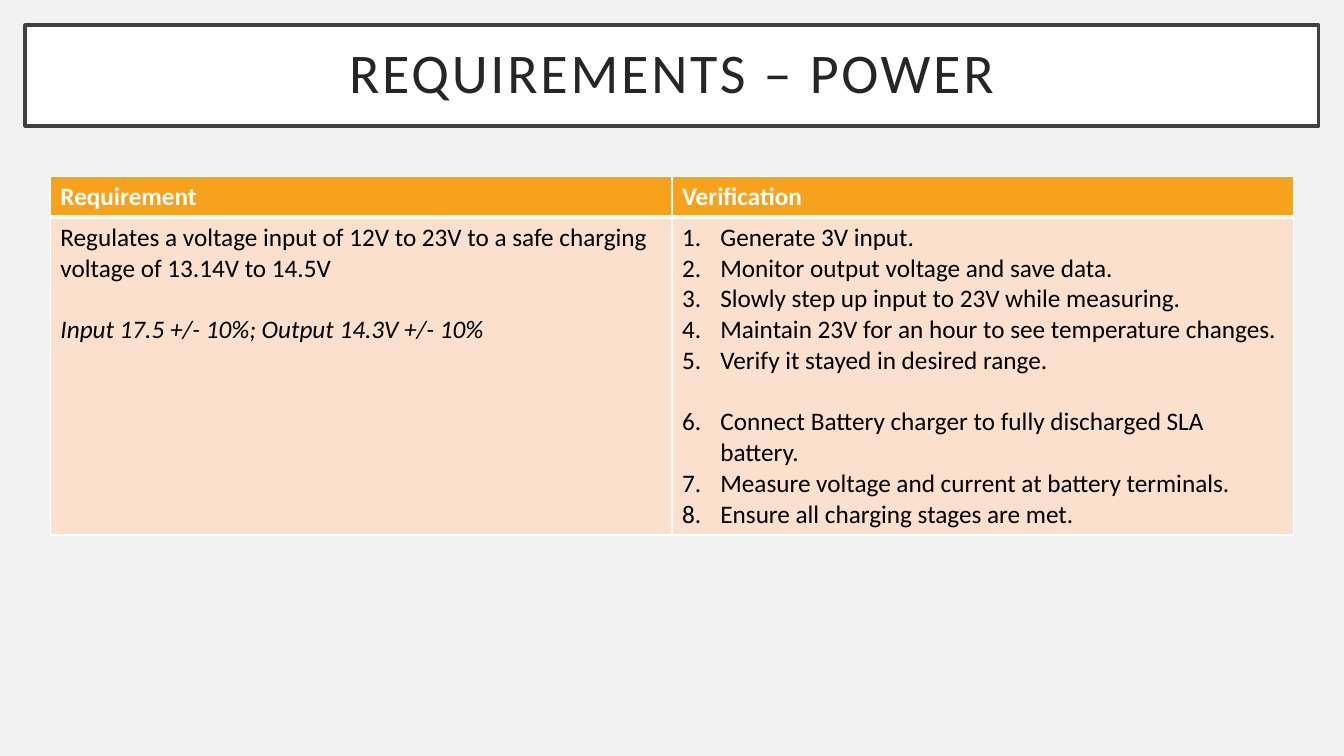
from lxml import etree
from pptx import Presentation
from pptx.dml.color import RGBColor
from pptx.enum.shapes import MSO_SHAPE
from pptx.enum.text import MSO_ANCHOR, PP_ALIGN
from pptx.oxml.ns import qn
from pptx.util import Inches, Pt

RECT = MSO_SHAPE.RECTANGLE
MIDDLE = MSO_ANCHOR.MIDDLE
CENTER = PP_ALIGN.CENTER

FONT = "Calibri"
WHITE, BLACK = "FFFFFF", "000000"
ORANGE, PEACH = "F6A21D", "FBE0CD"
BLANK_LINE = 22  # points, one line of 18 pt text

HEADERS = ["Requirement", "Verification"]
# Each paragraph: text and its format
REQUIREMENT = [
    ("Regulates a voltage input of 12V to 23V to a safe charging voltage of 13.14V to 14.5V", {}),
    ("Input 17.5 +/- 10%; Output 14.3V +/- 10%", {"italic": True, "before": BLANK_LINE}),
]
VERIFICATION = [
    ("Generate 3V input.", {}),
    ("Monitor output voltage and save data.", {}),
    ("Slowly step up input to 23V while measuring.", {}),
    ("Maintain 23V for an hour to see temperature changes.", {}),
    ("Verify it stayed in desired range.", {}),
    ("Connect Battery charger to fully discharged SLA battery.", {"before": BLANK_LINE}),
    ("Measure voltage and current at battery terminals.", {}),
    ("Ensure all charging stages are met.", {}),
]


def rgb(color):
    return RGBColor.from_string(color)


def add_text(tf, text, size=18, color=BLACK, bold=False, italic=False, align=None,
             before=0, line_spacing=None, tracking=0, numbered=False):
    """Write one paragraph, using the empty first one if it is still free."""
    p = tf.paragraphs[0]
    if p.runs:
        p = tf.add_paragraph()
    p.alignment = align
    p.space_before = Pt(before)
    p.line_spacing = line_spacing
    r = p.add_run()
    r.text = text
    font = r.font
    font.name, font.size, font.bold, font.italic = FONT, Pt(size), bold, italic
    font.color.rgb = rgb(color)
    if tracking:
        font._element.set("spc", str(tracking * 100))
    if numbered:
        pPr = p._p.get_or_add_pPr()
        pPr.set("marL", str(Inches(0.38)))
        pPr.set("indent", str(-Inches(0.38)))
        etree.SubElement(pPr, qn("a:buFont"), typeface="+mj-lt")
        etree.SubElement(pPr, qn("a:buAutoNum"), type="arabicPeriod")


def style_cell(cell, fill, top=1, bottom=1):
    """Give a cell white borders (widths in points) and a plain fill."""
    tcPr = cell._tc.get_or_add_tcPr()
    for side, width in (("L", 1), ("R", 1), ("T", top), ("B", bottom)):
        ln = etree.SubElement(tcPr, qn(f"a:ln{side}"), w=str(Pt(width)))
        solid = etree.SubElement(ln, qn("a:solidFill"))
        etree.SubElement(solid, qn("a:srgbClr"), val=WHITE)
    cell.fill.solid()
    cell.fill.fore_color.rgb = rgb(fill)


def add_title(s, text, left, top, width, height):
    sp = s.shapes.add_shape(RECT, Inches(left), Inches(top), Inches(width), Inches(height))
    sp.shadow.inherit = False
    sp.fill.solid()
    sp.fill.fore_color.rgb = rgb(WHITE)
    sp.line.color.rgb = rgb("404040")
    sp.line.width = Pt(2.5)
    tf = sp.text_frame
    tf.word_wrap = True
    tf.vertical_anchor = MIDDLE
    tf.margin_left = tf.margin_right = tf.margin_top = tf.margin_bottom = Inches(0.2)
    add_text(tf, text, size=40, color="262626", align=CENTER, line_spacing=0.9, tracking=2)


def add_requirements_table(s, left, top, width, height, header_height=0.4):
    frame = s.shapes.add_table(2, 2, Inches(left), Inches(top), Inches(width), Inches(height))
    table = frame.table
    table.rows[0].height = Inches(header_height)
    table.rows[1].height = Inches(height - header_height)
    # Header row
    for col, header in enumerate(HEADERS):
        cell = table.cell(0, col)
        style_cell(cell, ORANGE, bottom=3)
        add_text(cell.text_frame, header, color=WHITE, bold=True)
    # Body row, with the verification steps numbered
    for col, (paragraphs, numbered) in enumerate([(REQUIREMENT, False), (VERIFICATION, True)]):
        cell = table.cell(1, col)
        style_cell(cell, PEACH, top=3)
        for text, text_format in paragraphs:
            add_text(cell.text_frame, text, numbered=numbered, **text_format)


def main():
    prs = Presentation()
    prs.slide_width, prs.slide_height = Inches(13.33), Inches(7.5)
    s = prs.slides.add_slide(prs.slide_layouts[6])
    s.background.fill.solid()
    s.background.fill.fore_color.rgb = rgb("F2F2F2")
    add_title(s, "REQUIREMENTS – POWER", 0.25, 0.25, 12.83, 1)
    add_requirements_table(s, 0.5, 1.75, 12.33, 3.55)
    prs.save("out.pptx")


if __name__ == "__main__":
    main()
